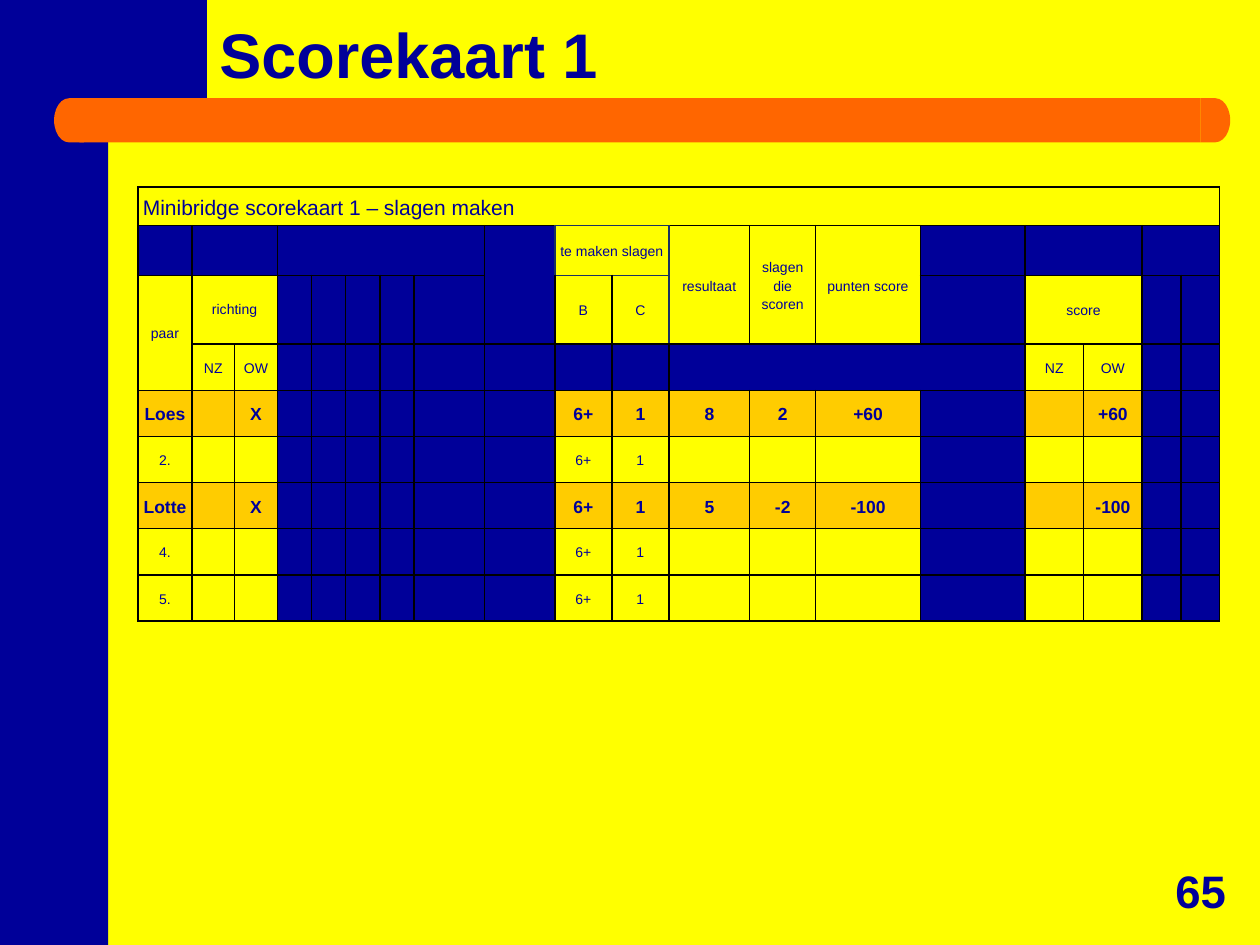
from lxml.etree import SubElement
from pptx import Presentation
from pptx.dml.color import RGBColor
from pptx.enum.shapes import MSO_SHAPE
from pptx.enum.text import MSO_ANCHOR, PP_ALIGN
from pptx.oxml.ns import qn
from pptx.util import Cm, Pt

COLORS = {"yellow": "FFFF00", "blue": "000099", "orange": "FF6600",
          "gold": "FFCC00", "black": "000000", "navy": "1A3361"}
FONT = "Arial"

COL_WIDTHS = ([1.09] + [0.86] * 2 + [0.69] * 4 + [1.42] * 2 + [1.15] * 2
              + [1.63, 1.33] + [2.11] * 2 + [1.18] * 2 + [0.78] * 2)
ROW_HEIGHTS = [0.78, 1, 1.39] + [0.93] * 6
# first row, first column, last row, last column
MERGES = [(0, 0, 0, 18), (1, 1, 1, 2), (1, 3, 1, 7), (1, 8, 2, 8),
          (1, 9, 1, 10), (1, 11, 2, 11), (1, 12, 2, 12), (1, 13, 2, 13),
          (1, 17, 1, 18), (2, 0, 3, 0), (2, 1, 2, 2), (2, 15, 2, 16)]
HEADERS = [
    {0: "Minibridge scorekaart 1 – slagen maken"},
    {9: "te maken slagen", 11: "resultaat", 12: "slagen die scoren",
     13: "punten score"},
    {0: "paar", 1: "richting", 9: "B", 10: "C", 15: "score"},
    {1: "NZ", 2: "OW", 15: "NZ", 16: "OW"},
]
SCORES = [
    {0: "Loes", 2: "X", 11: "8", 12: "2", 13: "+60", 16: "+60"},
    {0: "2."},
    {0: "Lotte", 2: "X", 11: "5", 12: "-2", 13: "-100", 16: "-100"},
    {0: "4."},
    {0: "5."},
]
GOLD_ROWS = {4, 6}
UNUSED_COLS = {*range(3, 9), 14, 17, 18}
UNUSED_BY_ROW = {0: set(), 1: {*range(9), *range(14, 19)},
                 3: UNUSED_COLS | {*range(9, 14)}}
# edges that differ from black; None means no line
EDGES = {(1, 8): {"R": "navy"}, (2, 8): {"R": "navy"},
         (1, 9): dict.fromkeys("LRTB", "navy"),
         (1, 10): dict.fromkeys("LRTB", "navy"),
         (1, 11): {"L": "navy"}, (2, 9): {"T": "navy"}, (2, 10): {"T": "navy"},
         (1, 15): {"R": None}, (1, 16): {"L": None},
         (3, 11): {"R": None}, (3, 12): {"L": None, "R": None},
         (3, 13): {"L": None, "R": None}, (3, 14): {"L": None}}


def rgb(name):
    return RGBColor.from_string(COLORS[name])


def paint(shape, color):
    shape.shadow.inherit = False
    shape.fill.solid()
    shape.fill.fore_color.rgb = rgb(color)
    shape.line.fill.background()


def add_block(s, kind, x, y, w, h, color):
    shape = s.shapes.add_shape(kind, Cm(x), Cm(y), Cm(w), Cm(h))
    paint(shape, color)
    return shape


def add_run(p, text, size, bold=False):
    r = p.add_run()
    r.text = text
    r.font.name = FONT
    r.font.size = Pt(size)
    r.font.bold = bold
    r.font.color.rgb = rgb("blue")


def add_frame(s):
    """Blue corner and side band with the orange bar across them."""
    add_block(s, MSO_SHAPE.RECTANGLE, 0, 0, 2.18, 19.05, "blue")
    corner = [(4.17, 0), (4.17, 2.11), (1.47, 2.13), (1.32, 2.16),
              (1.22, 2.34), (1.12, 2.64), (1.09, 3.25), (0.71, 3.25), (0.71, 0)]
    points = [(Cm(x), Cm(y)) for x, y in corner]
    builder = s.shapes.build_freeform(*points[0])
    builder.add_line_segments(points[1:], close=True)
    paint(builder.convert_to_shape(), "blue")
    add_block(s, MSO_SHAPE.RECTANGLE, 1.6, 1.98, 22.6, 0.89, "orange")
    left_end = add_block(s, MSO_SHAPE.FLOWCHART_DELAY, 1.09, 1.98, 0.6, 0.89, "orange")
    left_end.rotation = 180
    add_block(s, MSO_SHAPE.FLOWCHART_DELAY, 24.2, 1.98, 0.6, 0.89, "orange")


def add_title(s, text):
    title = s.shapes.title
    title.left, title.top, title.width, title.height = Cm(4.17), Cm(0), Cm(20.04), Cm(1.98)
    tf = title.text_frame
    tf.vertical_anchor = MSO_ANCHOR.BOTTOM
    p = tf.paragraphs[0]
    p.alignment = PP_ALIGN.LEFT
    p.line_spacing = 0.9
    add_run(p, text, 36, True)


def add_page_number(s, text):
    tf = s.shapes.add_textbox(Cm(23.01), Cm(17.27), Cm(2.39), Cm(1.35)).text_frame
    tf.word_wrap = True
    tf.vertical_anchor = MSO_ANCHOR.BOTTOM
    p = tf.paragraphs[0]
    p.alignment = PP_ALIGN.CENTER
    add_run(p, text, 26, True)


def set_borders(cell, edges):
    tc_pr = cell._tc.get_or_add_tcPr()
    for side in "LRTB":
        color = edges.get(side, "black")
        ln = SubElement(tc_pr, qn(f"a:ln{side}"), w=str(Pt(1)))
        if color is None:
            SubElement(ln, qn("a:noFill"))
        else:
            fill = SubElement(ln, qn("a:solidFill"))
            SubElement(fill, qn("a:srgbClr"), val=COLORS[color])


def format_cell(cell, row, col, text):
    set_borders(cell, EDGES.get((row, col), {}))
    if col in UNUSED_BY_ROW.get(row, UNUSED_COLS):
        cell.fill.solid()
        cell.fill.fore_color.rgb = rgb("blue")
    elif row in GOLD_ROWS:
        cell.fill.solid()
        cell.fill.fore_color.rgb = rgb("gold")
    else:
        cell.fill.background()
    cell.margin_left = cell.margin_right = Cm(0.1)
    cell.margin_top = cell.margin_bottom = 0
    cell.vertical_anchor = MSO_ANCHOR.MIDDLE
    p = cell.text_frame.paragraphs[0]
    if text:
        p.alignment = PP_ALIGN.LEFT if row == 0 else PP_ALIGN.CENTER
        p.line_spacing = 1 if text == "richting" else 1.15
        size = 12 if row == 0 else 10 if row in GOLD_ROWS else 8
        add_run(p, text, size, row in GOLD_ROWS)


def add_score_table(s):
    rows = HEADERS + [{9: "6+", 10: "1"} | score for score in SCORES]
    table = s.shapes.add_table(len(rows), len(COL_WIDTHS), Cm(2.78), Cm(3.77),
                               Cm(sum(COL_WIDTHS)), Cm(sum(ROW_HEIGHTS))).table
    table.first_row = table.horz_banding = False
    for column, width in zip(table.columns, COL_WIDTHS):
        column.width = Cm(width)
    for table_row, height in zip(table.rows, ROW_HEIGHTS):
        table_row.height = Cm(height)
    for top, left, bottom, right in MERGES:
        table.cell(top, left).merge(table.cell(bottom, right))
    for row, texts in enumerate(rows):
        for col in range(len(COL_WIDTHS)):
            format_cell(table.cell(row, col), row, col, texts.get(col))


def main():
    prs = Presentation()
    prs.slide_width, prs.slide_height = Cm(25.4), Cm(19.05)
    s = prs.slides.add_slide(prs.slide_layouts[5])
    s.background.fill.solid()
    s.background.fill.fore_color.rgb = rgb("yellow")
    add_frame(s)
    add_title(s, "Scorekaart 1")
    add_score_table(s)
    add_page_number(s, "65")
    prs.save("out.pptx")


if __name__ == "__main__":
    main()
